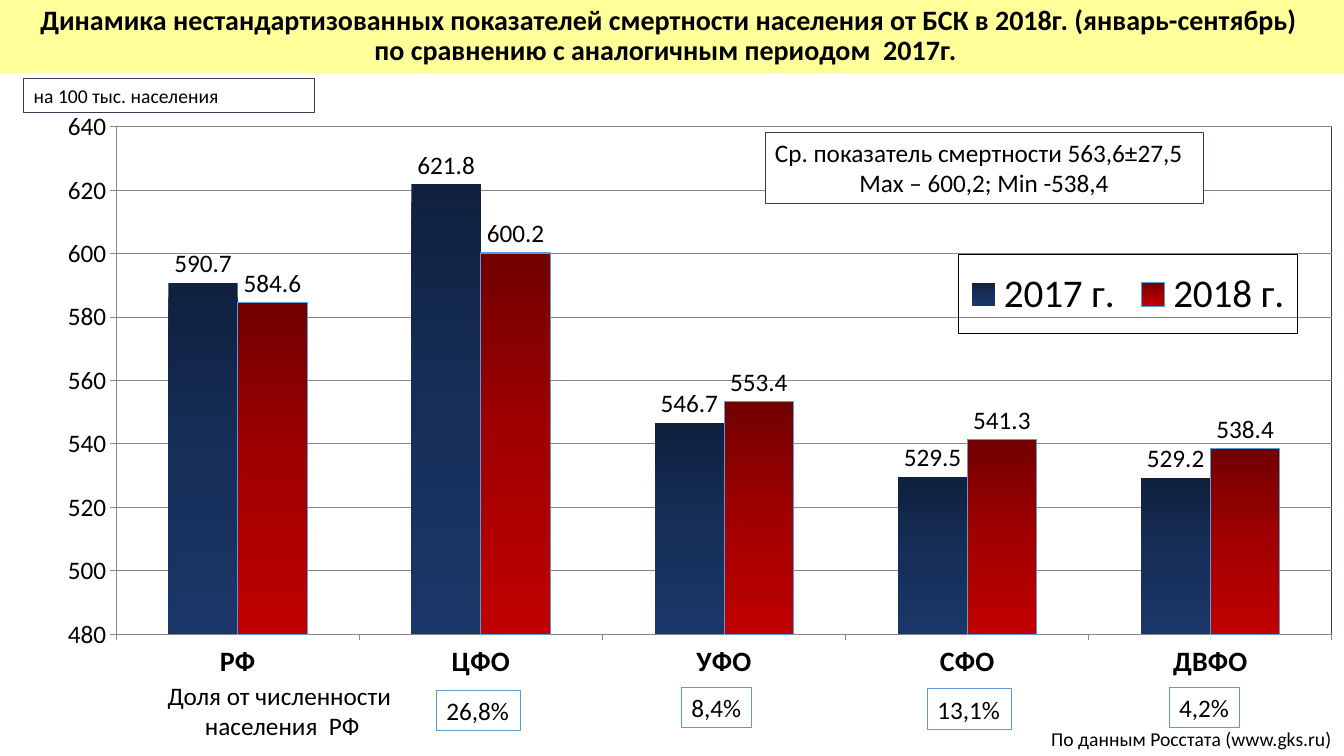
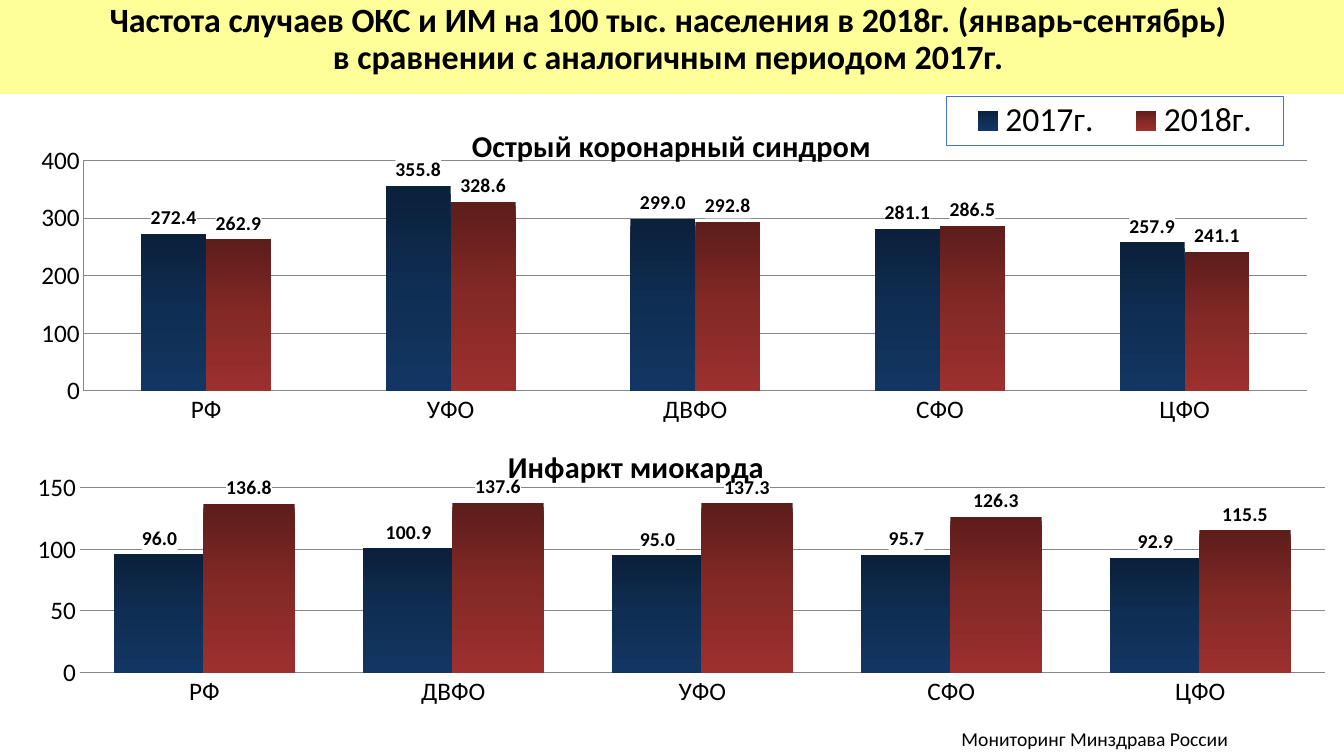
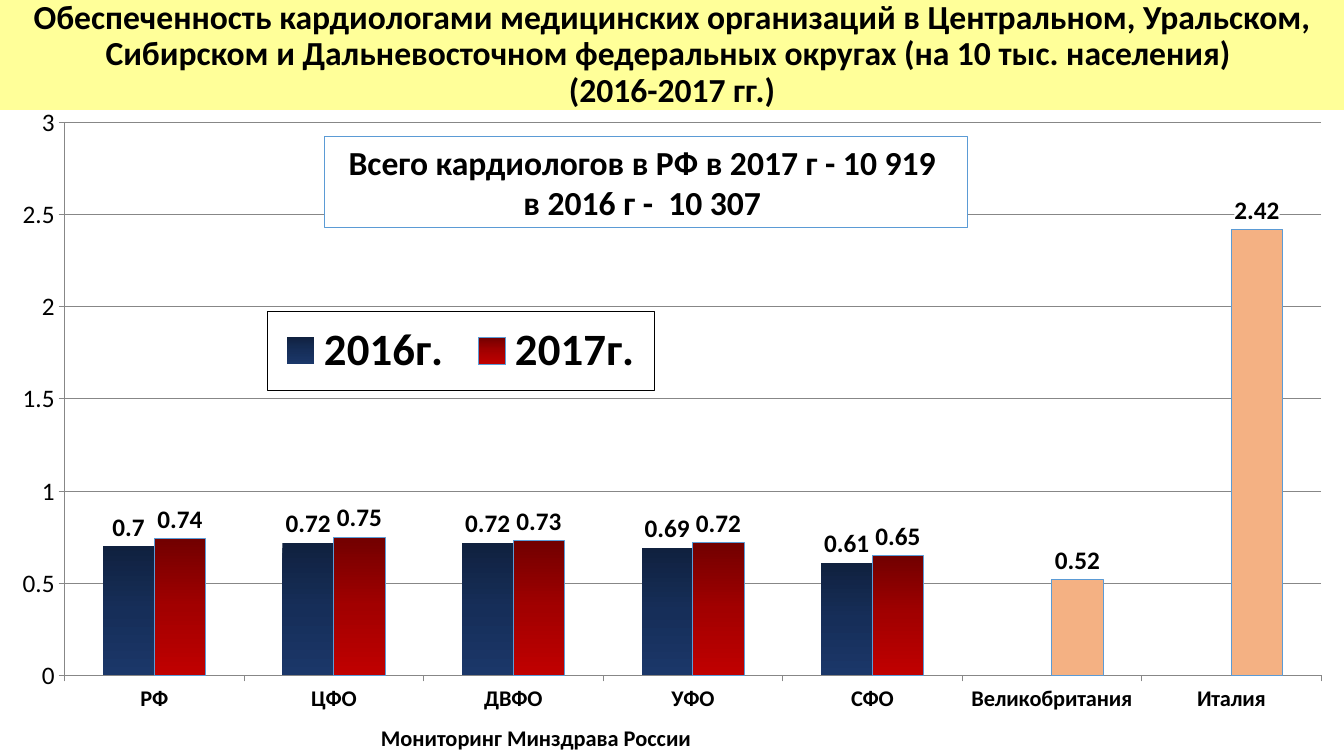
from pptx import Presentation
from pptx.chart.data import CategoryChartData
from pptx.dml.color import RGBColor
from pptx.enum import chart as ch, shapes, text as tx
from pptx.oxml import parse_xml
from pptx.oxml.ns import nsdecls, qn
from pptx.util import Pt

# Shared style
FONT = "Calibri"
BLACK, WHITE, BAND = "000000", "FFFFFF", "FFFF99"
SLATE, BLUE, GRID, PEACH = "333F50", "5B9BD5", "878787", "F4B183"
NAVY = ("10213F", "162E59", "1B3769")
RED = ("720000", "A20000", "C00000")
DEEP = ("0B203B", "0F2E53", "123663")
BRICK = ("5D1D1B", "842926", "9C302E")
LEFT, MID = tx.PP_ALIGN.LEFT, tx.PP_ALIGN.CENTER
WIDE, HIGH = 960, 540


def rgb(code):
    return RGBColor.from_string(code)


def style(font, size, bold=False):
    font.name, font.size, font.bold = FONT, Pt(size), bold
    font.color.rgb = rgb(BLACK)


def stroke(line, color, width=0.75):
    line.color.rgb = rgb(color)
    line.width = Pt(width)


def write(frame, lines, size=18, bold=False, align=LEFT, space=None):
    """Put lines of text in a frame, one paragraph each."""
    frame.text = lines
    for par in frame.paragraphs:
        par.alignment = align
        par.line_spacing = space
        for run in par.runs:
            style(run.font, size, bold)


# Text elements
def page(deck, lines, height, size, foot=3.6):
    """Add a slide with the yellow title band."""
    slide = deck.slides.add_slide(deck.slide_layouts[5])
    band = slide.shapes.title
    band.left, band.top = Pt(0), Pt(0)
    band.width, band.height = Pt(WIDE), Pt(height)
    band.fill.solid()
    band.fill.fore_color.rgb = rgb(BAND)
    frame = band.text_frame
    write(frame, lines, size, True, MID, 0.9)
    frame.auto_size = tx.MSO_AUTO_SIZE.NONE
    frame.vertical_anchor = tx.MSO_ANCHOR.MIDDLE
    frame.margin_bottom = Pt(foot)
    return slide


def note(slide, lines, at, wrap=False, **form):
    """Add plain text."""
    box = slide.shapes.add_textbox(*map(Pt, at))
    write(box.text_frame, lines, **form)
    box.text_frame.word_wrap = wrap
    return box


def frame(slide, lines, at, line=BLUE, fill=None, wrap=False, **form):
    """Add text in an outlined rectangle."""
    box = slide.shapes.add_shape(shapes.MSO_SHAPE.RECTANGLE, *map(Pt, at))
    box.shadow.inherit = False
    if fill:
        box.fill.solid()
        box.fill.fore_color.rgb = rgb(fill)
    else:
        box.fill.background()
    stroke(box.line, line)
    write(box.text_frame, lines, **form)
    box.text_frame.word_wrap = wrap
    return box


# Chart parts
def place(part, spot, index=1, inner=False):
    """Give a chart part a fixed place, in fractions of the chart."""
    for old in part.findall(qn("c:layout")):
        part.remove(old)
    rows = '<c:layoutTarget val="inner"/>' if inner else ""
    rows += '<c:xMode val="edge"/><c:yMode val="edge"/>'
    rows += "".join(f'<c:{key} val="{val}"/>' for key, val in zip("xywh", spot))
    part.insert(index, parse_xml(
        f'<c:layout {nsdecls("c")}><c:manualLayout>{rows}</c:manualLayout></c:layout>'))


def look(fill=None, line=None):
    """Build the fill and outline of a chart part."""
    def solid(color):
        return f'<a:solidFill><a:srgbClr val="{color}"/></a:solidFill>'
    body = solid(fill) if fill else "<a:noFill/>"
    edge = f'<a:ln w="9525">{solid(line)}</a:ln>' if line else ""
    return parse_xml(f'<c:spPr {nsdecls("c", "a")}>{body}{edge}</c:spPr>')


def shade(series, colors):
    """Fill bars with a downward gradient."""
    stops = "".join(f'<a:gs pos="{50000 * i}"><a:srgbClr val="{c}"/></a:gs>'
                    for i, c in enumerate(colors))
    series._element.get_or_add_spPr().insert(0, parse_xml(
        f'<a:gradFill {nsdecls("a")}><a:gsLst>{stops}</a:gsLst>'
        '<a:lin ang="5400000" scaled="0"/></a:gradFill>'))


def label(series, size, bold, form, back):
    tags = series.data_labels
    tags.show_value = True
    tags.number_format, tags.number_format_is_linked = form, False
    tags.position = ch.XL_LABEL_POSITION.OUTSIDE_END
    style(tags.font, size, bold)
    if back:
        tags._element.find(qn("c:txPr")).addprevious(look(back))


def axes(chart, scale, tick, cat):
    low, high, step = scale
    val = chart.value_axis
    val.minimum_scale, val.maximum_scale, val.major_unit = low, high, step
    val.has_major_gridlines = True
    stroke(val.major_gridlines.format.line, GRID)
    style(val.tick_labels.font, 18)
    style(chart.category_axis.tick_labels.font, *cat)
    for axis in (val, chart.category_axis):
        axis.major_tick_mark = tick
        stroke(axis.format.line, GRID)


def key(chart, spot, line, size, bold=False):
    """Add an outlined legend."""
    chart.has_legend = True
    legend = chart.legend
    legend.position = ch.XL_LEGEND_POSITION.RIGHT
    legend.include_in_layout = False
    style(legend.font, size, bold)
    place(legend._element, spot)
    legend._element.find(qn("c:txPr")).addprevious(look(line=line))


def head(chart, words, spot):
    chart.has_title = True
    write(chart.chart_title.text_frame, words, 21.6, True)
    place(chart.chart_title._element, spot)


def bars(slide, at, cats, data, colors, plot, scale, gap=150, over=0,
         tick=ch.XL_TICK_MARK.OUTSIDE, cat=(18, False), tags=(18, False, "General", None),
         edge=None):
    """Add a clustered column chart; edge outlines the second series."""
    source = CategoryChartData(number_format="General")
    source.categories = cats
    for name, vals in data.items():
        source.add_series(name, vals)
    chart = slide.shapes.add_chart(
        ch.XL_CHART_TYPE.COLUMN_CLUSTERED, *map(Pt, at), source).chart
    chart.has_title = chart.has_legend = False
    style(chart.font, 18)
    group = chart.plots[0]
    group.gap_width, group.overlap, group.vary_by_categories = gap, over, False
    for i, series in enumerate(group.series):
        if edge and i:
            stroke(series.format.line, edge)
        shade(series, colors[i])
        label(series, *tags)
    axes(chart, scale, tick, cat)
    place(chart._chartSpace.chart.plotArea, plot, 0, True)
    return chart


# Slides
def deaths(deck):
    slide = page(deck, "Динамика нестандартизованных показателей смертности населения "
                 "от БСК в 2018г. (январь-сентябрь) \n"
                 "по сравнению с аналогичным периодом  2017г.  ", 52.5, 20)
    chart = bars(slide, (9.4, 74.2, 943, 420), ("РФ", "ЦФО", "УФО", "СФО", "ДВФО"),
                 {"2017 г.": (590.7, 621.8, 546.7, 529.5, 529.2),
                  "2018 г.": (584.6, 600.2, 553.4, 541.3, 538.4)},
                 (NAVY, RED), (0.078, 0.039, 0.921, 0.863), (480, 640, 20),
                 cat=(20, True), edge=BLUE)
    chart._chartSpace.chart.plotArea.append(look(line=SLATE))
    key(chart, (0.716, 0.257, 0.257, 0.134), BLACK, 28)
    frame(slide, "на 100 тыс. населения", (17, 56, 208, 24.5), SLATE, wrap=True, size=14)
    mean = frame(slide, "Ср. показатель смертности 563,6±27,5\nMax – 600,2; Min -538,4",
                 (546.5, 94.3, 313, 51), SLATE, WHITE, align=MID)
    mean.text_frame.paragraphs[0].alignment = LEFT
    note(slide, "По данным Росстата (www.gks.ru)", (743.8, 515.5, 216, 24.5), size=14)
    # Share of population under each district
    for share, left, top, width in (("26,8%", 311.8, 493, 60), ("8,4%", 486.7, 491, 50.4),
                                    ("13,1%", 662.4, 492, 60), ("4,2%", 835.2, 491, 50.4)):
        frame(slide, share, (left, top, width, 29))
    note(slide, "Доля от численности \nнаселения  РФ", (111.6, 482.4, 180, 51), align=MID)


def cases(deck):
    slide = page(deck, "Частота случаев ОКС и ИМ на 100 тыс. населения "
                 "в 2018г. (январь-сентябрь) \n"
                 "в сравнении с аналогичным периодом 2017г. ", 67, 24.3, 13)
    note(slide, "Мониторинг Минздрава России", (679.7, 515.5, 206.6, 24.5), size=14)
    form = dict(colors=(DEEP, BRICK), tick=ch.XL_TICK_MARK.NONE,
                tags=(14, True, "0.0", WHITE))
    acute = bars(slide, (11.5, 68.4, 929.5, 252.7), ("РФ", "УФО", "ДВФО", "СФО", "ЦФО"),
                 {"2017г.": (272.4, 355.8, 299, 281.1, 257.9),
                  "2018г.": (262.9, 328.6, 292.8, 286.5, 241.1)},
                 plot=(0.052, 0.182, 0.94, 0.652), scale=(0, 400, 100), gap=177, **form)
    head(acute, "Острый коронарный синдром", (0.346, 0.065))
    key(acute, (0.715, 0, 0.259, 0.139), "4472C4", 24)
    heart = bars(slide, (11.5, 302.4, 949, 213), ("РФ", "ДВФО", "УФО", "СФО", "ЦФО"),
                 {"Series 1": (96, 100.9, 95, 95.7, 92.9),
                  "Series 2": (136.8, 137.6, 137.3, 126.3, 115.5)},
                 plot=(0.048, 0.216, 0.937, 0.62), scale=(0, 150, 50), gap=75, over=2, **form)
    head(heart, "Инфаркт миокарда", (0.366, 0.055))
    heart.value_axis.format.line.fill.background()


def staff(deck):
    slide = page(deck, "Обеспеченность кардиологами медицинских организаций в Центральном, "
                 "Уральском, Сибирском и Дальневосточном федеральных округах "
                 "(на 10 тыс. населения) \n(2016-2017 гг.)", 78.5, 24)
    chart = bars(slide, (0, 74.2, WIDE, 445.7),
                 ("РФ", "ЦФО", "ДВФО", "УФО", "СФО", "Великобритания", "Италия"),
                 {"2016г.": (0.7, 0.72, 0.72, 0.69, 0.61, None, None),
                  "2017г.": (0.74, 0.75, 0.73, 0.72, 0.65, 0.52, 2.42)},
                 (NAVY, RED), (0.048, 0.03, 0.935, 0.886), (0, 3, 0.5),
                 cat=(16, True), tags=(18, True, "General", WHITE), edge=BLUE)
    # Foreign countries stand out
    for i in (5, 6):
        bar = chart.plots[0].series[1].points[i].format
        bar.fill.solid()
        bar.fill.fore_color.rgb = rgb(PEACH)
        stroke(bar.line, BLUE)
    key(chart, (0.199, 0.332, 0.288, 0.127), BLACK, 32, True)
    frame(slide, "Всего кардиологов в РФ в 2017 г - 10 919 \nв 2016 г -  10 307 ",
          (231.8, 97.2, 459.4, 65.5), fill=WHITE, wrap=True, size=24, bold=True, align=MID)
    note(slide, "Мониторинг Минздрава России", (265, 513.4, 291, 26.6), True,
         size=16, bold=True)


def main():
    deck = Presentation()
    deck.slide_width, deck.slide_height = Pt(WIDE), Pt(HIGH)
    for build in (deaths, cases, staff):
        build(deck)
    deck.save("out.pptx")


if __name__ == "__main__":
    main()
